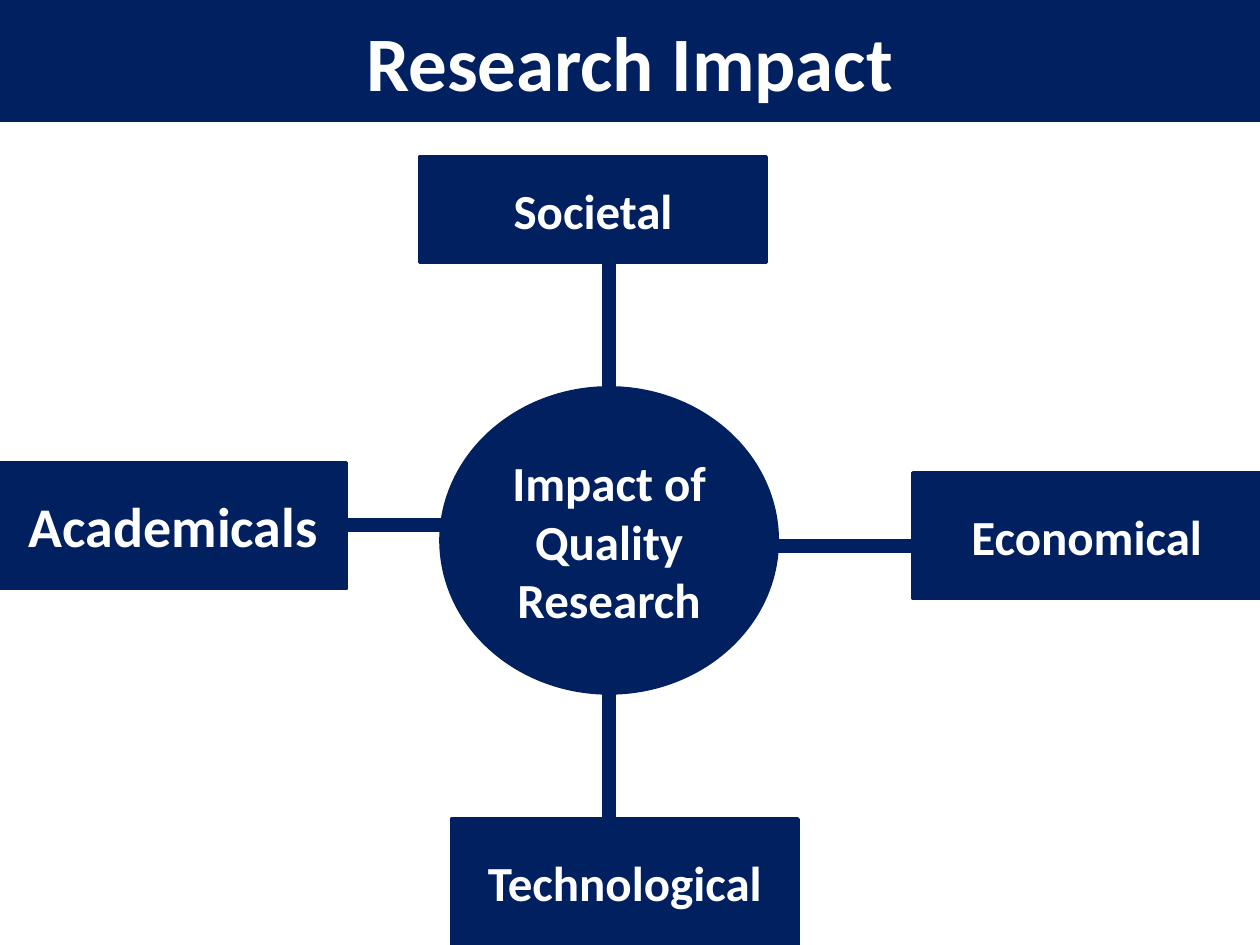
from pptx import Presentation
from pptx.dml.color import RGBColor
from pptx.enum.shapes import MSO_CONNECTOR, MSO_SHAPE
from pptx.enum.text import MSO_ANCHOR, PP_ALIGN
from pptx.oxml.ns import qn
from pptx.util import Cm, Pt
from lxml.etree import SubElement

COLORS = {"navy": "002060", "white": "FFFFFF"}
FONT = "Calibri"
WIDE, HIGH = 25.4, 19.05
BOX = 6.99
HUB = 12.28  # centre of the oval, where the upright links run

# text, left, top, height, size
TOPICS = [
    ("Societal", 8.46, 3.17, 2.12, 28),
    ("Economical", WIDE - BOX, 9.53, 2.54, 28),
    ("Academicals", 0, 9.32, 2.54, 32),
    ("Technological", 9.1, HIGH - 2.54, 2.54, 28),
]

# from x, from y, to x, to y
LINKS = [
    (HUB, 5.29, HUB, 7.82),
    (18.84, 11.01, 15.67, 11.01),
    (HUB, 13.77, HUB, 16.94),
    (BOX, 10.58, 9.53, 10.58),
]


def color(name):
    return RGBColor.from_string(COLORS[name])


def paint(shape, text, size):
    """Fill a shape in navy and centre bold white text in it."""
    shape.fill.solid()
    shape.fill.fore_color.rgb = color("navy")
    frame = shape.text_frame
    frame.text = text
    frame.word_wrap = True
    frame.vertical_anchor = MSO_ANCHOR.MIDDLE
    para = frame.paragraphs[0]
    para.alignment = PP_ALIGN.CENTER
    font = para.runs[0].font
    font.name, font.size, font.bold = FONT, Pt(size), True
    font.color.rgb = color("white")


def add_title(slide, text):
    title = slide.shapes.title
    title.left, title.top = Cm(0), Cm(0)
    title.width, title.height = Cm(WIDE), Cm(2.46)
    paint(title, text, 44)


def add_node(slide, kind, text, left, top, width, height, size):
    node = slide.shapes.add_shape(kind, Cm(left), Cm(top), Cm(width), Cm(height))
    node.shadow.inherit = False
    node.line.color.rgb = color("navy")
    node.line.width = Pt(2)
    paint(node, text, size)


def add_link(slide, ends):
    link = slide.shapes.add_connector(MSO_CONNECTOR.STRAIGHT, *map(Cm, ends))
    link.line.color.rgb = color("navy")
    link.line.width = Pt(8)
    SubElement(link._element.spPr, qn("a:effectLst"))


def main():
    deck = Presentation()
    deck.slide_width, deck.slide_height = Cm(WIDE), Cm(HIGH)
    slide = deck.slides.add_slide(deck.slide_layouts[5])
    add_title(slide, "Research Impact")
    add_node(slide, MSO_SHAPE.OVAL, "Impact of Quality Research",
             8.89, 7.82, 6.78, 6.15, 28)
    for text, left, top, height, size in TOPICS:
        add_node(slide, MSO_SHAPE.RECTANGLE, text, left, top, BOX, height, size)
    for ends in LINKS:
        add_link(slide, ends)
    deck.save("out.pptx")


if __name__ == "__main__":
    main()
